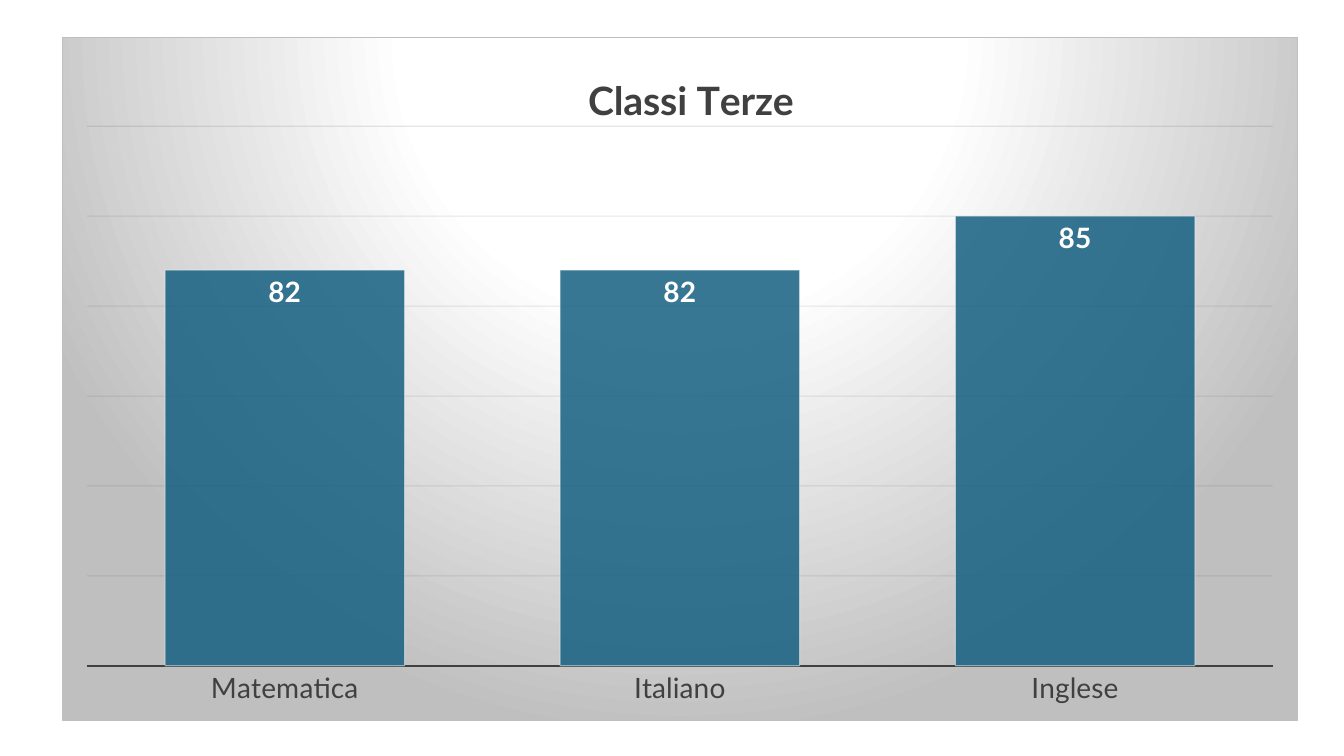
from dataclasses import dataclass

from lxml import etree
from pptx import Presentation
from pptx import util as u
from pptx.chart import data as cd
from pptx.dml.color import RGBColor
from pptx.enum import chart as ec
from pptx.oxml import parse_xml
from pptx.oxml.ns import nsdecls, qn

SCALE = 914400 / 100.8


def px(n):
    return u.Emu(round(n * SCALE))


@dataclass(frozen=True)
class Theme:
    face: str = "Lato"
    ink: str = "404040"
    grid: str = "0D0D0D"
    bar: str = "156082"
    light: str = "FFFFFF"
    edge: str = "BFBFBF"
    head: int = 28
    label: int = 20
    base: int = 10


class Deck:
    def __init__(self, theme):
        self.theme = theme
        self.show = Presentation()
        self.show.slide_width, self.show.slide_height = px(1344), px(756)
        self.slide = self.show.slides.add_slide(self.show.slide_layouts[6])

    def put(self, item, form):
        for key, value in form.items():
            setattr(item, key, value)

    def font(self, font, size, tint, bold=False):
        self.put(font, dict(name=self.theme.face, size=u.Pt(size), bold=bold))
        font.color.rgb = RGBColor.from_string(tint)

    def line(self, line, tint, width):
        line.width = u.Pt(width)
        line.color.rgb = RGBColor.from_string(tint)

    def fade(self, chart, query, part):
        for tint in chart.element.xpath(query + "//a:srgbClr"):
            etree.SubElement(tint, qn("a:alpha")).set("val", str(part * 1000))

    def place(self, root, spot, **size):
        for old in root.findall(qn("c:layout")):
            root.remove(old)
        keys = dict(xMode="edge", yMode="edge", **size)
        inner = '<c:layoutTarget val="inner"/>' if "w" in size else ""
        rows = "".join(f'<c:{k} val="{v}"/>' for k, v in keys.items())
        root.insert(spot, parse_xml(
            f'<c:layout {nsdecls("c")}><c:manualLayout>{inner}{rows}'
            "</c:manualLayout></c:layout>"))

    def back(self, chart):
        t = self.theme
        stops = "".join(
            f'<a:gs pos="{pos * 1000}"><a:srgbClr val="{tint}"/></a:gs>'
            for pos, tint in ((0, t.light), (39, t.light), (100, t.edge)))
        chart.element.find(qn("c:chart")).addnext(parse_xml(
            f'<c:spPr {nsdecls("c", "a")}><a:gradFill><a:gsLst>{stops}</a:gsLst>'
            '<a:path path="circle"><a:fillToRect l="50000" t="-80000" r="50000"'
            ' b="180000"/></a:path></a:gradFill><a:ln w="9525"><a:solidFill>'
            f'<a:srgbClr val="{t.edge}"/></a:solidFill></a:ln></c:spPr>'))

    def axes(self, chart):
        t = self.theme
        cat, val = chart.category_axis, chart.value_axis
        self.put(cat, dict(major_tick_mark=ec.XL_TICK_MARK.NONE,
                           minor_tick_mark=ec.XL_TICK_MARK.NONE,
                           has_major_gridlines=False))
        self.font(cat.tick_labels.font, t.label, t.ink)
        self.line(cat.format.line, t.ink, 1.5)
        self.put(val, dict(minimum_scale=60, maximum_scale=90, major_unit=5,
                           has_major_gridlines=True, visible=False))
        self.line(val.major_gridlines.format.line, t.grid, 0.75)
        self.fade(chart, ".//c:majorGridlines", 10)

    def bars(self, chart):
        t = self.theme
        plot = chart.plots[0]
        self.put(plot, dict(gap_width=65, vary_by_categories=False,
                            has_data_labels=True))
        self.put(plot.data_labels, dict(
            show_value=True, number_format="0", number_format_is_linked=False,
            position=ec.XL_LABEL_POSITION.INSIDE_END))
        self.font(plot.data_labels.font, t.label, t.light, True)
        form = plot.series[0].format
        form.fill.solid()
        form.fill.fore_color.rgb = RGBColor.from_string(t.bar)
        self.line(form.line, t.light, 0.75)
        self.fade(chart, ".//c:ser/c:spPr/a:solidFill", 85)
        self.fade(chart, ".//c:ser/c:spPr/a:ln", 50)

    def chart(self, title, scores, box):
        t = self.theme
        data = cd.CategoryChartData(number_format="0")
        data.categories = list(scores)
        data.add_series("Series 1", list(scores.values()))
        chart = self.slide.shapes.add_chart(
            ec.XL_CHART_TYPE.COLUMN_CLUSTERED, *map(px, box), data).chart
        self.font(chart.font, t.base, "000000")
        self.put(chart, dict(has_legend=False, has_title=True))
        frame = chart.chart_title.text_frame
        frame.text = title
        self.font(frame.paragraphs[0].runs[0].font, t.head, t.ink, True)
        chart.chart_title.include_in_layout = False
        self.axes(chart)
        self.bars(chart)
        self.back(chart)
        root = chart.element.find(qn("c:chart"))
        self.place(root.find(qn("c:title")), 1, x=0.42, y=0.04)
        self.place(root.find(qn("c:plotArea")), 0, x=0.02, y=0.13, w=0.96, h=0.79)


def main():
    deck = Deck(Theme())
    scores = {"Matematica": 82, "Italiano": 82, "Inglese": 85}
    deck.chart("Classi Terze", scores, (62, 37, 1236, 684))
    deck.show.save("out.pptx")


if __name__ == "__main__":
    main()
